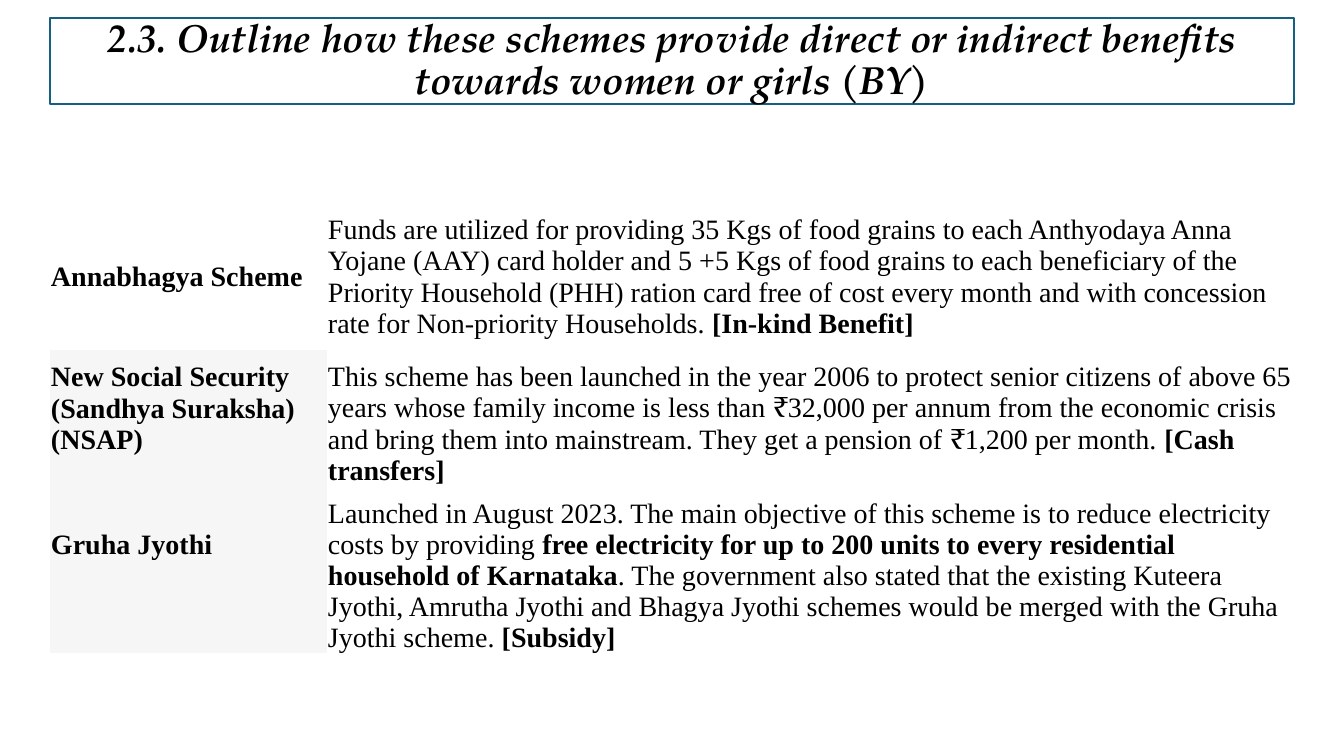
from pptx import Presentation
from pptx.dml.color import RGBColor as Color
from pptx.enum.text import MSO_ANCHOR as Anchor, MSO_AUTO_SIZE as AutoSize, PP_ALIGN as Align
from pptx.util import Pt

PX = 914400 / 100.8
COLORS = {"text": "000000", "paper": "FFFFFF", "border": "156082", "label": "F6F6F6"}
TITLE_FONT = "TeX Gyre Pagella"
TABLE_FONT = "Times New Roman"
PLAIN_TABLE_STYLE = "{2D5ABB26-0587-4C30-8999-92F81FD0307C}"
TITLE = ("2.3. Outline how these schemes provide direct or indirect benefits "
         "towards women or girls (BY)")

SCHEMES = [
    ("Annabhagya Scheme", None, 0, [
        ("Funds are utilized for providing 35 Kgs of food grains to each Anthyodaya Anna "
         "Yojane (AAY) card holder and 5 +5 Kgs of food grains to each beneficiary of the "
         "Priority Household (PHH) ration card free of cost every month and with concession "
         "rate for Non-priority Households. ", False),
        ("[In-kind Benefit]", True)]),
    ("New Social Security (Sandhya Suraksha) (NSAP)", "label", 31, [
        ("This scheme has been launched in the year 2006 to protect senior citizens of above 65 "
         "years whose family income is less than ₹32,000 per annum from the economic crisis "
         "and bring them into mainstream. They get a pension of ₹1,200 per month. ", False),
        ("[Cash transfers]", True)]),
    ("Gruha Jyothi", "label", 62, [
        ("Launched in August 2023. The main objective of this scheme is to reduce electricity "
         "costs by providing ", False),
        ("free electricity for up to 200 units to every residential household of Karnataka", True),
        (". The government also stated that the existing Kuteera Jyothi, Amrutha Jyothi and "
         "Bhagya Jyothi schemes would be merged with the Gruha Jyothi scheme. ", False),
        ("[Subsidy]", True)]),
]


def px(length):
    return round(length * PX)


def color(name):
    return Color.from_string(COLORS[name])


def add_run(paragraph, text, font_name, size, bold, italic=False):
    run = paragraph.add_run()
    run.text = text
    font = run.font
    font.name, font.size, font.bold, font.italic = font_name, Pt(size), bold, italic
    font.color.rgb = color("text")


def fill_title(title, left, top, width, height):
    title.left, title.top, title.width, title.height = map(px, (left, top, width, height))
    title.fill.solid()
    title.fill.fore_color.rgb = color("paper")
    title.line.color.rgb = color("border")
    title.line.width = Pt(1.5)
    frame = title.text_frame
    frame.word_wrap = True
    frame.auto_size = AutoSize.NONE
    frame.vertical_anchor = Anchor.MIDDLE
    paragraph = frame.paragraphs[0]
    paragraph.alignment = Align.CENTER
    paragraph.line_spacing = 0.9
    add_run(paragraph, TITLE, TITLE_FONT, 28, True, True)


def fill_cell(cell, runs, fill_name, bottom):
    cell.margin_left = cell.margin_right = cell.margin_top = px(1)
    cell.margin_bottom = px(bottom)
    cell.vertical_anchor = Anchor.MIDDLE
    if fill_name:
        cell.fill.solid()
        cell.fill.fore_color.rgb = color(fill_name)
    else:
        cell.fill.background()
    for text, bold in runs:
        add_run(cell.text_frame.paragraphs[0], text, TABLE_FONT, 20, bold)


def add_scheme_table(slide, left, top, width, row_height, label_width):
    frame = slide.shapes.add_table(len(SCHEMES), 2, px(left), px(top), px(width),
                                   px(row_height * len(SCHEMES)))
    table = frame.table
    table.first_row = table.horz_banding = False
    table._tbl.tblPr[0].text = PLAIN_TABLE_STYLE
    table.columns[0].width = px(label_width)
    table.columns[1].width = px(width - label_width)
    for index, (label, fill_name, label_bottom, details) in enumerate(SCHEMES):
        table.rows[index].height = px(row_height)
        fill_cell(table.cell(index, 0), [(label, True)], fill_name, label_bottom)
        fill_cell(table.cell(index, 1), details, None, 0)


def main():
    presentation = Presentation()
    presentation.slide_width, presentation.slide_height = px(1344), px(756)
    slide = presentation.slides.add_slide(presentation.slide_layouts[5])
    fill_title(slide.shapes.title, 50, 18, 1244, 86)
    add_scheme_table(slide, 50, 203, 1244, 147, 277)
    presentation.save("out.pptx")


if __name__ == "__main__":
    main()
